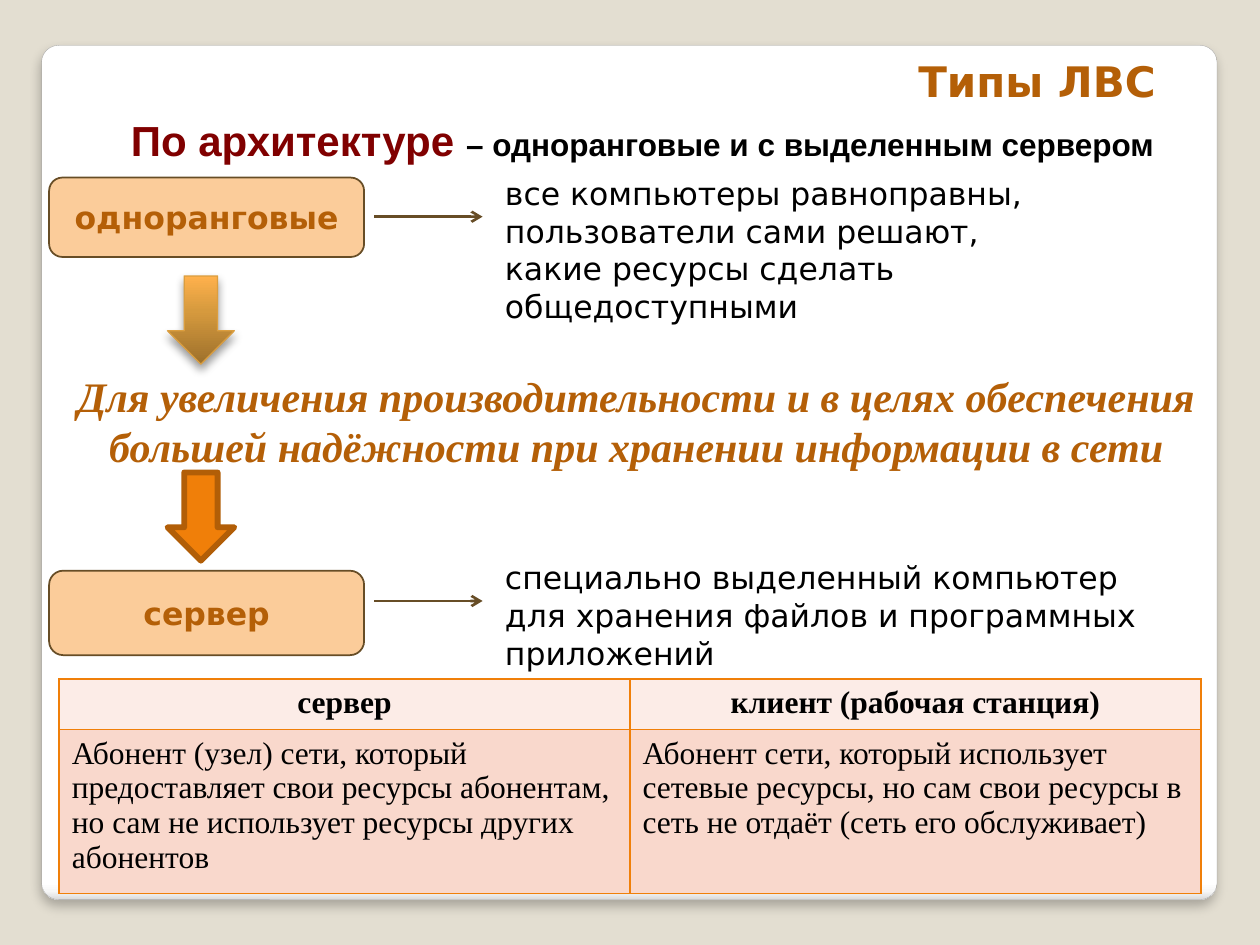
import lxml.etree
import pptx
import pptx.dml.color
import pptx.enum.shapes
import pptx.enum.text
import pptx.oxml.ns
import pptx.util

Inches = pptx.util.Inches
SHAPES = pptx.enum.shapes.MSO_SHAPE
ALIGN = pptx.enum.text.PP_ALIGN
ANCHOR = pptx.enum.text.MSO_ANCHOR

COLORS = {
    "backdrop": "E3DED1", "panel_edge": "A4A4A4", "white": "FFFFFF",
    "panel_low": "F7F7F7", "panel_base": "DADADA", "black": "000000",
    "rust": "B45F07", "maroon": "800000", "peach": "FBCC9A", "brown": "674D26",
    "orange": "F07F09", "orange_edge": "B25E07", "gold_edge": "DB9E3F",
    "gold_dark": "9D702B", "gold_mid": "D69A3E", "gold": "FFB14C",
    "header": "FCECE7", "body": "F9D8CC",
}
FONTS = {
    "title": {"name": "DejaVu Sans", "size": 24, "bold": True, "color": "rust"},
    "lead": {"name": "Arial", "size": 24, "bold": True, "color": "maroon"},
    "kinds": {"name": "Arial", "size": 18, "bold": True, "color": "black"},
    "label": {"name": "DejaVu Sans", "size": 18, "bold": True, "color": "rust"},
    "plain": {"name": "DejaVu Sans", "size": 18, "bold": False, "color": "black"},
    "reason": {"name": "Times New Roman", "size": 24, "bold": True, "italic": True, "color": "rust"},
    "header": {"name": "Times New Roman", "size": 18, "bold": True, "color": "black"},
    "body": {"name": "Times New Roman", "size": 18, "bold": False, "color": "black"},
}
TABLE_ROWS = [
    ("header", ALIGN.CENTER, 0.4, ["сервер", "клиент (рабочая станция)"]),
    ("body", ALIGN.LEFT, 1.3, [
        "Абонент (узел) сети, который предоставляет свои ресурсы абонентам, "
        "но сам не использует ресурсы других абонентов",
        "Абонент сети, который использует сетевые ресурсы, но сам свои ресурсы "
        "в сеть не отдаёт (сеть его обслуживает)",
    ]),
]


def rgb(name):
    """Return the named colour."""
    return pptx.dml.color.RGBColor.from_string(COLORS[name])


def add_node(parent, tag, **values):
    """Append a DrawingML element with the given attributes."""
    attributes = {key: str(value) for key, value in values.items()}
    return lxml.etree.SubElement(parent, pptx.oxml.ns.qn(tag), attributes)


def write(frame, paragraphs, align=ALIGN.LEFT):
    """Fill a text frame with paragraphs of (text, font) spans."""
    for index, spans in enumerate(paragraphs):
        para = frame.add_paragraph() if index else frame.paragraphs[0]
        para.alignment = align
        for text, style in spans:
            span = para.add_run()
            span.text = text
            for key, value in FONTS[style].items():
                if key == "color":
                    span.font.color.rgb = rgb(value)
                else:
                    setattr(span.font, key, pptx.util.Pt(value) if key == "size" else value)


def add_text(page, box, paragraphs, align=ALIGN.LEFT):
    """Place a wrapped text box."""
    frame = page.shapes.add_textbox(*map(Inches, box)).text_frame
    frame.word_wrap = True
    write(frame, paragraphs, align)


def add_box(page, kind, box, fill, edge, weight):
    """Place a flat outlined preset shape."""
    shape = page.shapes.add_shape(kind, *map(Inches, box))
    shape.shadow.inherit = False
    shape.fill.solid()
    shape.fill.fore_color.rgb = rgb(fill)
    shape.line.color.rgb = rgb(edge)
    shape.line.width = pptx.util.Pt(weight)
    return shape


def shade(shape, stops, angle, opacity, blur, distance):
    """Give a shape a gradient fill and a shadow falling downwards."""
    shape.fill.gradient()
    shape.fill.gradient_angle = angle
    properties = shape._element.spPr
    stop_list = properties.find(".//" + pptx.oxml.ns.qn("a:gsLst"))
    for stop in list(stop_list):
        stop_list.remove(stop)
    for position, color in stops:
        stop = add_node(stop_list, "a:gs", pos=position * 1000)
        add_node(stop, "a:srgbClr", val=COLORS[color])
    effects = properties.find(pptx.oxml.ns.qn("a:effectLst"))
    shadow = add_node(effects, "a:outerShdw", blurRad=pptx.util.Pt(blur),
                      dist=pptx.util.Pt(distance), dir=5400000, algn="t", rotWithShape=0)
    color = add_node(shadow, "a:srgbClr", val=COLORS["black"])
    add_node(color, "a:alpha", val=opacity * 1000)


def add_panel(page, box):
    """Place the backdrop and the white rounded panel."""
    page.background.fill.solid()
    page.background.fill.fore_color.rgb = rgb("backdrop")
    panel = add_box(page, SHAPES.ROUNDED_RECTANGLE, box, "white", "panel_edge", 0.16)
    panel.adjustments[0] = 0.02
    stops = [(0, "white"), (98, "white"), (99, "panel_low"), (100, "panel_base")]
    shade(panel, stops, 270, 25, 6, 4)


def add_heading(page, box):
    """Place the slide title and the classification line below it."""
    left, top, width, height = box
    add_text(page, (left + 6.25, top, 2.3, 0.5), [[("Типы ЛВС", "title")]])
    add_text(page, (left, top + 0.47, width, height - 0.47), [[
        ("По архитектуре ", "lead"),
        ("– одноранговые и с выделенным сервером", "kinds"),
    ]])


def add_definition(page, box, label, arrow_y, text_y, lines):
    """Place a labelled box, an arrow and the explanation to its right."""
    left = box[0]
    shape = add_box(page, SHAPES.FLOWCHART_ALTERNATE_PROCESS, box, "peach", "brown", 1)
    shape.text_frame.word_wrap = True
    shape.text_frame.vertical_anchor = ANCHOR.MIDDLE
    write(shape.text_frame, [[(label, "label")]], ALIGN.CENTER)
    arrow = page.shapes.add_connector(
        pptx.enum.shapes.MSO_CONNECTOR.STRAIGHT,
        Inches(left + 2.58), Inches(arrow_y), Inches(left + 3.44), Inches(arrow_y))
    arrow.line.color.rgb = rgb("brown")
    arrow.line.width = pptx.util.Pt(1.5)
    add_node(arrow.line._get_or_add_ln(), "a:tailEnd", type="arrow")
    add_node(arrow._element.spPr, "a:effectLst")
    add_text(page, (left + 3.52, text_y, 5.4, 1.01), [[(line, "plain")] for line in lines])


def add_transition(page, box):
    """Place the reason for a server between two down arrows."""
    left, top, width, height = box
    arrow_left = left + 0.86
    first = add_box(page, SHAPES.DOWN_ARROW, (arrow_left, top, 0.53, 0.7),
                    "gold", "gold_edge", 0.75)
    shade(first, [(0, "gold_dark"), (60, "gold_mid"), (100, "gold")], 90, 40, 5.2, 3)
    add_text(page, (left, top + 0.7, width, 0.91), [
        [("Для увеличения производительности и в целях обеспечения", "reason")],
        [("большей надёжности при хранении информации в сети", "reason")],
    ], ALIGN.CENTER)
    add_box(page, SHAPES.DOWN_ARROW, (arrow_left, top + height - 0.7, 0.53, 0.7),
            "orange", "orange_edge", 3.35)


def add_roles(page, box):
    """Place the table comparing server and client."""
    table = page.shapes.add_table(2, 2, *map(Inches, box)).table
    for column in table.columns:
        column.width = Inches(box[2] / 2)
    for row, (style, align, height, texts) in enumerate(TABLE_ROWS):
        table.rows[row].height = Inches(height)
        for column, text in enumerate(texts):
            cell = table.cell(row, column)
            write(cell.text_frame, [[(text, style)]], align)
            properties = cell._tc.get_or_add_tcPr()
            for side in ("L", "R", "T", "B"):
                border = add_node(properties, "a:ln" + side, w=pptx.util.Pt(1))
                fill = add_node(border, "a:solidFill")
                add_node(fill, "a:srgbClr", val=COLORS["orange"])
            cell.fill.solid()
            cell.fill.fore_color.rgb = rgb(style)


def main():
    """Build the slide and save the deck."""
    deck = pptx.Presentation()
    for key, value in {"slide_width": 10, "slide_height": 7.5}.items():
        setattr(deck, key, Inches(value))
    page = deck.slides.add_slide(deck.slide_layouts[6])
    add_panel(page, (0.33, 0.36, 9.33, 6.78))
    add_heading(page, (0.94, 0.39, 8.59, 1))
    add_definition(page, (0.39, 1.41, 2.5, 0.63), "одноранговые", 1.72, 1.33, [
        "все компьютеры равноправны,",
        "пользователи сами решают,",
        "какие ресурсы сделать общедоступными",
    ])
    add_definition(page, (0.39, 4.53, 2.5, 0.67), "сервер", 4.77, 4.38, [
        "специально выделенный компьютер",
        "для хранения файлов и программных",
        "приложений",
    ])
    add_transition(page, (0.47, 2.19, 9.16, 2.26))
    add_roles(page, (0.47, 5.39, 9.06, 1.7))
    deck.save("out.pptx")


if __name__ == "__main__":
    main()
